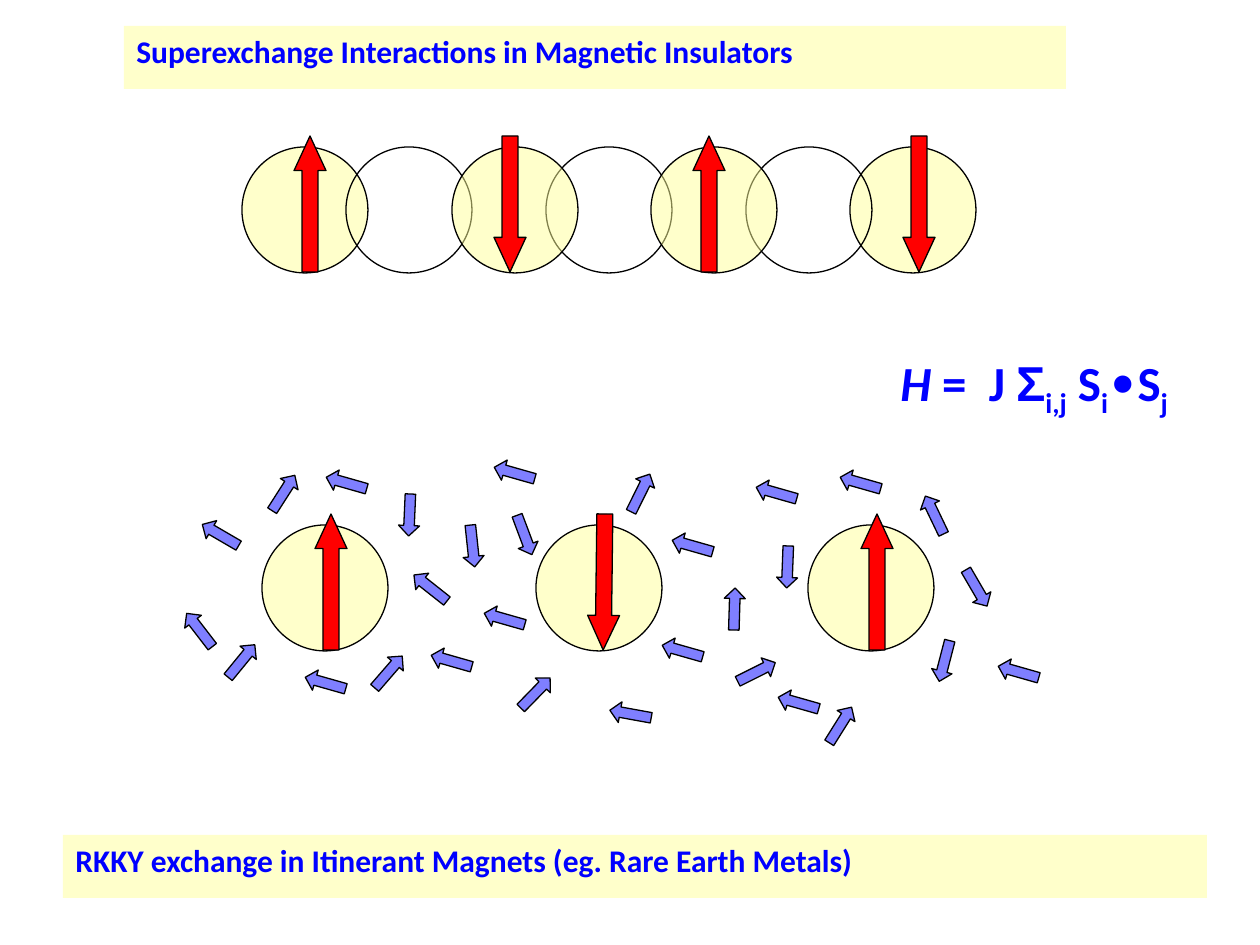
"""Build a slide on superexchange and RKKY magnetic interactions."""
from lxml.etree import SubElement
from pptx import Presentation
from pptx.dml.color import RGBColor
from pptx.enum.shapes import MSO_SHAPE
from pptx.enum.text import MSO_ANCHOR, PP_ALIGN
from pptx.oxml.ns import qn
from pptx.util import Emu, Pt

SCALE = 914400 / 126
YELLOW = RGBColor(0xFF, 0xFF, 0x99)
RED = RGBColor(0xFF, 0x00, 0x00)
BLUE = RGBColor(0x00, 0x00, 0xFF)
BLACK = RGBColor(0x00, 0x00, 0x00)

ATOM_SIZE = 126
SPIN_SIZE = (32, 136)
ELECTRON_SIZE = (21, 42)
COMMON_TURN = 285.9

CHAIN_ATOMS = [
    (242, YELLOW), (346, None), (850, YELLOW), (746, None),
    (546, None), (452, YELLOW), (651, YELLOW),
]
CHAIN_SPINS = [(294, 0), (494, 180), (693, 0), (903, 180)]
METAL_SITES = [(262, 315, 0), (536, 588, 180.7), (808, 861, 0)]
TURNED_ELECTRONS = [
    (210, 514, 300.3), (189, 609, 322.4), (399, 494, 182.5), (231, 640, 39.3),
    (273, 472, 32.6), (378, 651, 40.9), (924, 494, 334.4), (966, 567, 149.7),
    (777, 546, 182.2), (830, 704, 32.1), (620, 693, 280.3), (934, 640, 194.5),
    (514, 514, 159.4), (420, 567, 308.3), (746, 651, 63.4), (525, 672, 44.3),
    (724, 588, 1.7), (630, 472, 26.4), (462, 525, 174),
]
ALIGNED_ELECTRONS = [
    (504, 452), (494, 598), (766, 472), (788, 682), (1008, 651), (672, 630),
    (850, 462), (682, 525), (315, 662), (336, 462), (441, 640),
]
BANNERS = [
    ((124, 26, 942, 63), "Superexchange Interactions in Magnetic Insulators"),
    ((63, 835, 1144, 63), "RKKY exchange in Itinerant Magnets (eg. Rare Earth Metals)"),
]
FORMULA = [
    ("H", {"italic": True}, 0), (" =  J ", {}, 0), ("Σ", {"name": "Arial"}, 0),
    ("i,j", {}, -25), (" S", {}, 0), ("i", {}, -25),
    ("∙", {"name": "DejaVu Sans Mono"}, 0), ("S", {}, 0), ("j", {}, -25),
]


def px(length):
    """Convert pixels to EMU."""
    return Emu(round(length * SCALE))


def set_attributes(target, values):
    """Set each named value on the target."""
    for name, value in values.items():
        setattr(target, name, value)


def add_shape(slide, kind, box, color=None, opacity=100, outlined=True):
    """Add a flat preset shape with an optional fill and outline."""
    shape = slide.shapes.add_shape(kind, *map(px, box))
    shape.shadow.inherit = False
    if color is None:
        shape.fill.background()
    else:
        shape.fill.solid()
        shape.fill.fore_color.rgb = color
        if opacity < 100:
            color_element = shape.fill._xPr.find(".//" + qn("a:srgbClr"))
            SubElement(color_element, qn("a:alpha"), val=str(opacity * 1000))
    if outlined:
        shape.line.color.rgb = BLACK
        shape.line.width = Pt(0.75)
    else:
        shape.line.fill.background()
    return shape


def add_atom(slide, left, top, color):
    """Add a round atom, filled or open."""
    add_shape(slide, MSO_SHAPE.OVAL, (left, top, ATOM_SIZE, ATOM_SIZE), color, 50)


def add_arrow(slide, box, rotation, color, head, opacity=100):
    """Add a rotated block arrow with the given head length."""
    arrow = add_shape(slide, MSO_SHAPE.UP_ARROW, box, color, opacity)
    arrow.adjustments[0] = 0.5
    arrow.adjustments[1] = head
    arrow.rotation = rotation


def add_spin(slide, left, top, rotation):
    """Add the large red spin arrow of an atom."""
    add_arrow(slide, (left, top, *SPIN_SIZE), rotation, RED, 1.083)


def add_electron(slide, left, top, rotation):
    """Add the small blue spin arrow of a conduction electron."""
    add_arrow(slide, (left, top, *ELECTRON_SIZE), rotation, BLUE, 0.5, 50)


def write_text(shape, pieces, size):
    """Write bold blue runs, each with font overrides and a baseline shift."""
    frame = shape.text_frame
    set_attributes(frame, {"word_wrap": True, "vertical_anchor": MSO_ANCHOR.TOP})
    paragraph = frame.paragraphs[0]
    paragraph.alignment = PP_ALIGN.LEFT
    for text, overrides, baseline in pieces:
        run = paragraph.add_run()
        run.text = text
        font_values = {"name": "Calibri", "size": Pt(size), "bold": True}
        set_attributes(run.font, font_values | overrides)
        run.font.color.rgb = BLUE
        if baseline:
            run._r.get_or_add_rPr().set("baseline", str(baseline * 1000))


def add_banner(slide, box, text):
    """Add a pale yellow heading band."""
    banner = add_shape(slide, MSO_SHAPE.RECTANGLE, box, YELLOW, 50, outlined=False)
    write_text(banner, [(text, {}, 0)], 18)


def add_formula(slide, box):
    """Add the exchange Hamiltonian."""
    write_text(slide.shapes.add_textbox(*map(px, box)), FORMULA, 28)


def main():
    """Assemble and save the slide."""
    presentation = Presentation()
    set_attributes(presentation, {"slide_width": px(1260), "slide_height": px(945)})
    slide = presentation.slides.add_slide(presentation.slide_layouts[6])
    for left, color in CHAIN_ATOMS:
        add_atom(slide, left, 147, color)
    for left, rotation in CHAIN_SPINS:
        add_spin(slide, left, 136, rotation)
    for atom_left, spin_left, rotation in METAL_SITES:
        add_atom(slide, atom_left, 525, YELLOW)
        add_spin(slide, spin_left, 514, rotation)
    for left, top, rotation in TURNED_ELECTRONS:
        add_electron(slide, left, top, rotation)
    for left, top in ALIGNED_ELECTRONS:
        add_electron(slide, left, top, COMMON_TURN)
    for box, text in BANNERS:
        add_banner(slide, box, text)
    add_formula(slide, (888, 346, 354, 72))
    presentation.save("out.pptx")


if __name__ == "__main__":
    main()
